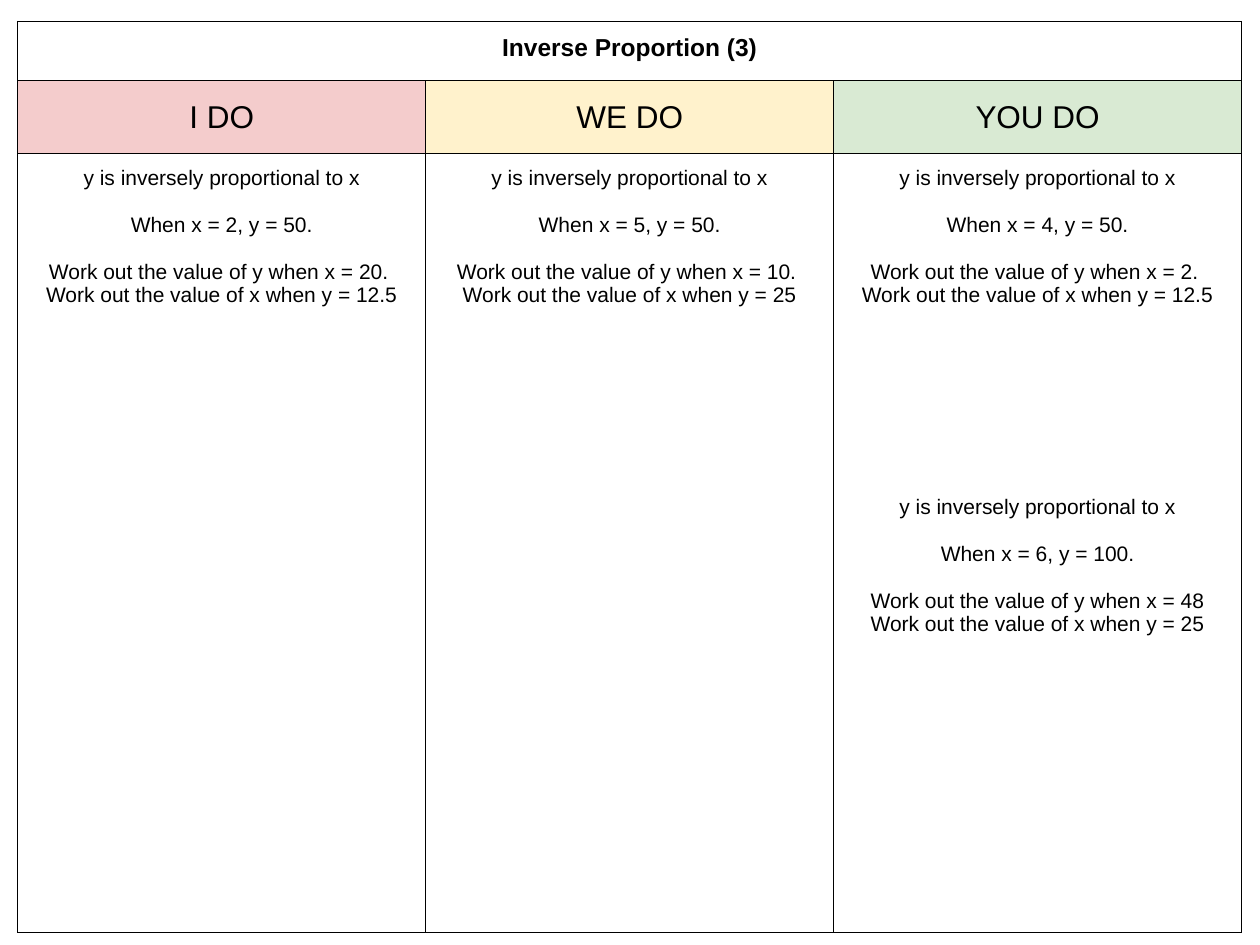
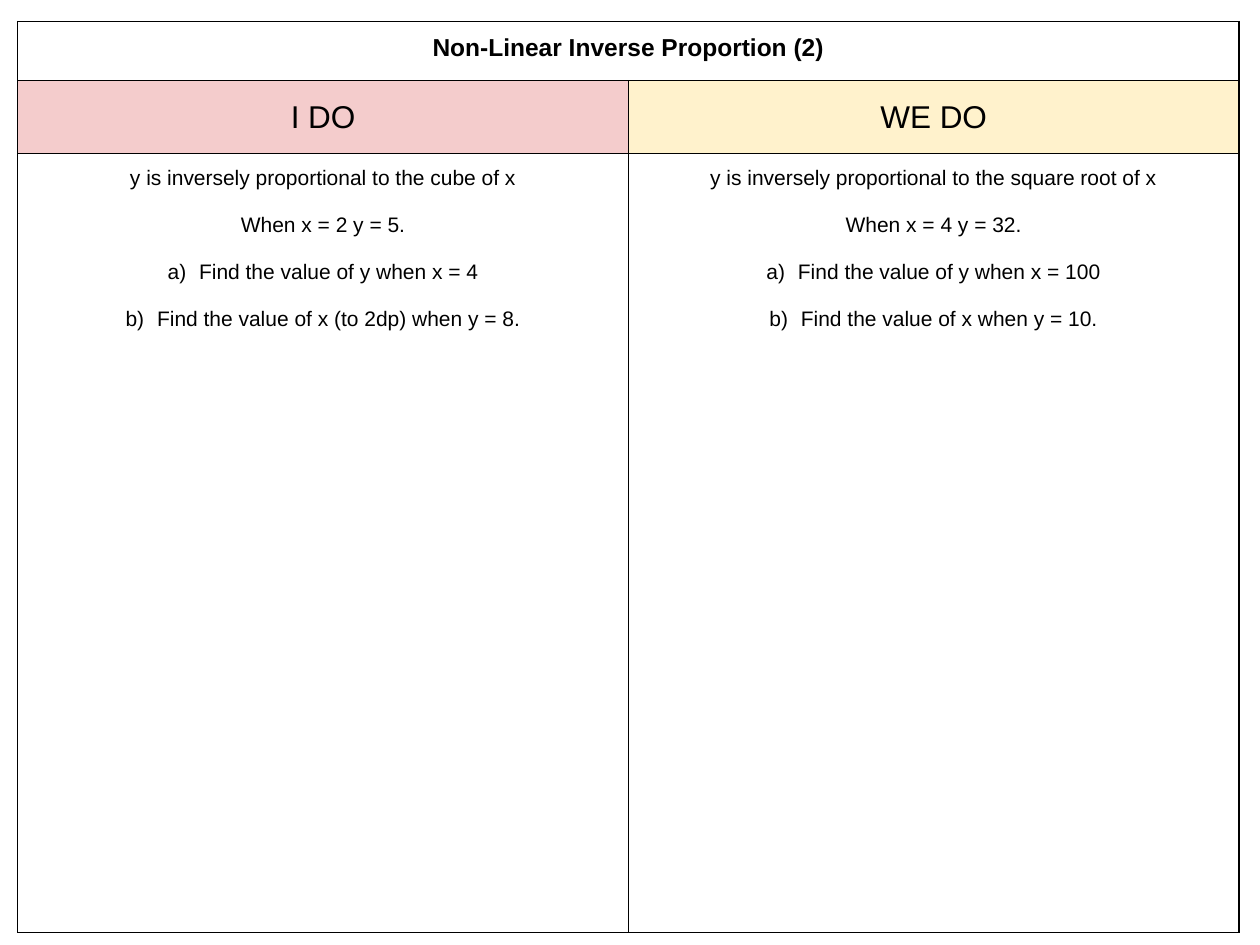
from dataclasses import dataclass

from lxml import etree
from pptx import Presentation
from pptx.dml.color import RGBColor as RGB
from pptx.enum.text import MSO_ANCHOR as Anchor, PP_ALIGN as Align
from pptx.oxml.ns import qn
from pptx.util import Pt

# Content: each body line is (blank lines above, text, lettered item or not)
LESSONS = [
    {
        "title": "Inverse Proportion (3)",
        "width": 699.3,
        "columns": [
            ("I DO", [
                (0, "y is inversely proportional to x", False),
                (1, "When x = 2, y = 50.", False),
                (1, "Work out the value of y when x = 20. ", False),
                (0, "Work out the value of x when y = 12.5", False),
            ]),
            ("WE DO", [
                (0, "y is inversely proportional to x", False),
                (1, "When x = 5, y = 50.", False),
                (1, "Work out the value of y when x = 10. ", False),
                (0, "Work out the value of x when y = 25", False),
            ]),
            ("YOU DO", [
                (0, "y is inversely proportional to x", False),
                (1, "When x = 4, y = 50.", False),
                (1, "Work out the value of y when x = 2. ", False),
                (0, "Work out the value of x when y = 12.5", False),
                (8, "y is inversely proportional to x", False),
                (1, "When x = 6, y = 100.", False),
                (1, "Work out the value of y when x = 48", False),
                (0, "Work out the value of x when y = 25", False),
            ]),
        ],
    },
    {
        "title": "Non-Linear Inverse Proportion (2)",
        "width": 697.8,
        "columns": [
            ("I DO", [
                (0, "y is inversely proportional to the cube of x", False),
                (1, "When x = 2 y = 5.", False),
                (1, "Find the value of y when x = 4", True),
                (1, "Find the value of x (to 2dp) when y = 8.", True),
            ]),
            ("WE DO", [
                (0, "y is inversely proportional to the square root of x", False),
                (1, "When x = 4 y = 32.", False),
                (1, "Find the value of y when x = 100", True),
                (1, "Find the value of x when y = 10.", True),
            ]),
        ],
    },
]


@dataclass(frozen=True)
class Theme:
    font: str = "Arial"
    ink: str = "000000"
    bands: tuple = ("F4CCCC", "FFF2CC", "D9EAD3")
    title: int = 14
    heading: int = 18
    body: int = 12
    line_height: float = 13.43
    border: float = 0.75
    margin: float = 7.2
    indent: int = 18


T = Theme()
LEFT, TOP = 10.2, 12.3
ROW_HEIGHTS = (33.9, 41.6, 445)


def add_text(p, text, size, bold=False):
    p.alignment = Align.CENTER
    r = p.add_run()
    r.text = text
    r.font.name, r.font.size, r.font.bold = T.font, Pt(size), bold
    r.font.color.rgb = RGB.from_string(T.ink)


def add_color(parent, tag):
    clr = etree.SubElement(parent, qn(tag))
    etree.SubElement(clr, qn("a:srgbClr"), val=T.ink)


def letter_item(p):
    """Number the paragraph a), b), ... with a hanging indent."""
    pPr = p._p.get_or_add_pPr()
    pPr.set("marL", str(Pt(T.indent)))
    pPr.set("indent", str(-Pt(T.indent)))
    add_color(pPr, "a:buClr")
    etree.SubElement(pPr, qn("a:buAutoNum"), type="alphaLcParenR")


def style_cell(cell, band=None):
    cell.margin_left = cell.margin_right = Pt(T.margin)
    cell.margin_top = cell.margin_bottom = Pt(T.margin)
    tcPr = cell._tc.get_or_add_tcPr()
    for side in "LRTB":
        ln = etree.SubElement(tcPr, qn("a:ln" + side), w=str(Pt(T.border)))
        add_color(ln, "a:solidFill")
    if band:
        cell.fill.solid()
        cell.fill.fore_color.rgb = RGB.from_string(band)
    else:
        cell.fill.background()


def fill_body(cell, lines):
    tf = cell.text_frame
    for i, (blanks, text, lettered) in enumerate(lines):
        p = tf.add_paragraph() if i else tf.paragraphs[0]
        p.space_before = Pt(blanks * T.line_height)
        add_text(p, text, T.body)
        if lettered:
            letter_item(p)


def add_lesson(prs, lesson):
    s = prs.slides.add_slide(prs.slide_layouts[6])
    columns, width = lesson["columns"], lesson["width"]
    table = s.shapes.add_table(len(ROW_HEIGHTS), len(columns), Pt(LEFT), Pt(TOP),
                               Pt(width), Pt(sum(ROW_HEIGHTS))).table
    table.first_row = table.horz_banding = False
    for row, height in zip(table.rows, ROW_HEIGHTS):
        row.height = Pt(height)

    # Heading and worked questions, column by column
    for c, (heading, lines) in enumerate(columns):
        table.columns[c].width = Pt(width / len(columns))
        title, head, body = (table.cell(r, c) for r in range(3))
        style_cell(title)
        style_cell(head, T.bands[c])
        style_cell(body)
        head.vertical_anchor = Anchor.MIDDLE
        add_text(head.text_frame.paragraphs[0], heading, T.heading)
        fill_body(body, lines)

    # Title across the full width
    title = table.cell(0, 0)
    title.merge(table.cell(0, len(columns) - 1))
    add_text(title.text_frame.paragraphs[0], lesson["title"], T.title, bold=True)


def main():
    prs = Presentation()
    prs.slide_width, prs.slide_height = Pt(720), Pt(540)
    for lesson in LESSONS:
        add_lesson(prs, lesson)
    prs.save("out.pptx")


if __name__ == "__main__":
    main()
